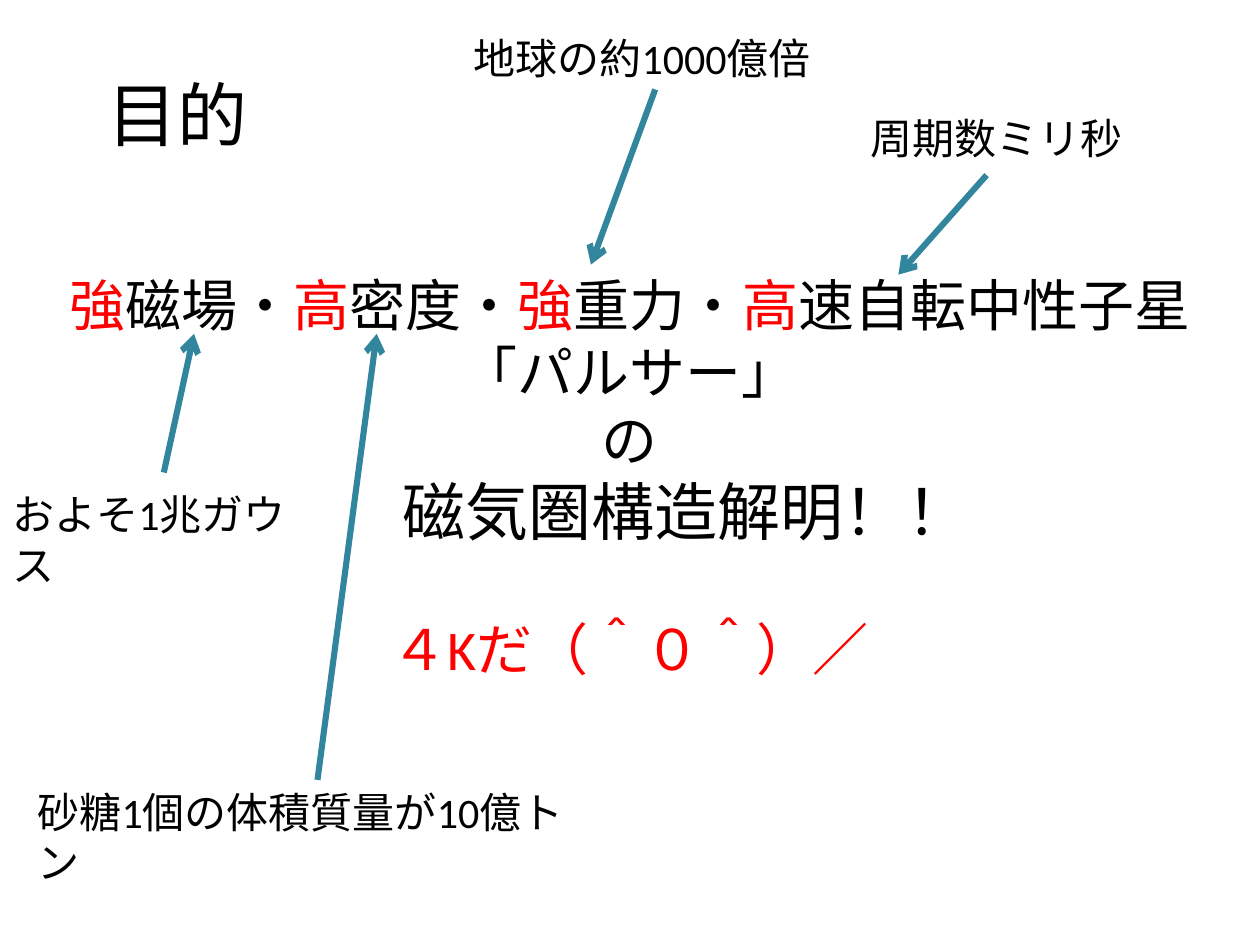
"""Builds the slide that states the aim of the pulsar study."""
from lxml.etree import SubElement
from pptx import Presentation
from pptx.dml.color import RGBColor
from pptx.enum.shapes import MSO_CONNECTOR as Connector
from pptx.enum.text import MSO_ANCHOR as Anchor, MSO_AUTO_SIZE as AutoSize, PP_ALIGN as Align
from pptx.oxml.ns import qn
from pptx.util import Inches, Pt

BLACK = RGBColor(0x00, 0x00, 0x00)
RED = RGBColor(0xFF, 0x00, 0x00)
TEAL = RGBColor(0x31, 0x85, 0x9C)

HEADLINE = [
    ("強", RED), ("磁場・", BLACK), ("高", RED), ("密度・", BLACK),
    ("強", RED), ("重力・", BLACK), ("高", RED), ("速自転中性子星", BLACK),
]
STATEMENT = [
    (HEADLINE, 32, 0, 0),
    ([("「パルサー」", BLACK)], 32, 0, 0),
    ([("の", BLACK)], 32, 0, 0),
    ([("磁気圏構造解明！！", BLACK)], 36, 0, 0.89),
    ([("４Kだ（＾０＾）／", RED)], 32, 38, 0),
]
LABELS = [
    ("地球の約1000億倍", 3.66, 0.21, 3.07),
    ("周期数ミリ秒", 6.81, 0.84, 3.19),
    ("およそ1兆ガウス", 0, 3.83, 2.64),
    ("砂糖1個の体積質量が10億トン", 0.2, 6.19, 4.65),
]
ARROWS = [
    (5.2, 0.71, 4.69, 2.1),
    (7.83, 1.39, 7.13, 2.18),
    (1.3, 3.75, 1.54, 2.65),
    (2.52, 6.19, 2.99, 2.65),
]


class SlideWriter:
    """Holds the style and the current slide."""

    font = "Calibri"

    def __init__(self, page):
        self.page = page

    def style(self, span, size, color=BLACK):
        span.font.name = self.font
        span.font.size = Pt(size)
        span.font.color.rgb = color

    def title(self, text, left, top, width, height):
        box = self.page.shapes.title
        box.left, box.top = Inches(left), Inches(top)
        box.width, box.height = Inches(width), Inches(height)
        frame = box.text_frame
        frame.text = text
        frame.vertical_anchor = Anchor.TOP
        frame.auto_size = AutoSize.SHAPE_TO_FIT_TEXT
        para = frame.paragraphs[0]
        para.alignment = Align.LEFT
        self.style(para.runs[0], 40)

    def text_box(self, left, top, width, height):
        box = self.page.shapes.add_textbox(
            Inches(left), Inches(top), Inches(width), Inches(height))
        frame = box.text_frame
        frame.word_wrap = True
        frame.auto_size = AutoSize.SHAPE_TO_FIT_TEXT
        return frame

    def label(self, text, left, top, width):
        frame = self.text_box(left, top, width, 0.5)
        frame.text = text
        self.style(frame.paragraphs[0].runs[0], 24)

    def statement(self, lines, left, top, width, height):
        frame = self.text_box(left, top, width, height)
        for index, (parts, size, space, indent) in enumerate(lines):
            para = frame.add_paragraph() if index else frame.paragraphs[0]
            para.alignment = Align.CENTER
            para.space_before = Pt(space)
            if indent:
                para._p.get_or_add_pPr().set("marL", str(Inches(indent)))
            for text, color in parts:
                span = para.add_run()
                span.text = text
                self.style(span, size, color)

    def arrow(self, *ends):
        connector = self.page.shapes.add_connector(
            Connector.STRAIGHT, *map(Inches, ends))
        connector.line.color.rgb = TEAL
        connector.line.width = Pt(3.5)
        SubElement(connector.line._get_or_add_ln(), qn("a:tailEnd"), type="arrow")
        SubElement(connector._element.spPr, qn("a:effectLst"))


def main():
    deck = Presentation()
    deck.slide_width, deck.slide_height = Inches(10), Inches(7.5)
    writer = SlideWriter(deck.slides.add_slide(deck.slide_layouts[5]))
    writer.title("目的", 0.75, 0.52, 1.65, 0.77)
    writer.statement(STATEMENT, 0, 2.1, 10, 3.4)
    for label in LABELS:
        writer.label(*label)
    for arrow in ARROWS:
        writer.arrow(*arrow)
    deck.save("out.pptx")


if __name__ == "__main__":
    main()
